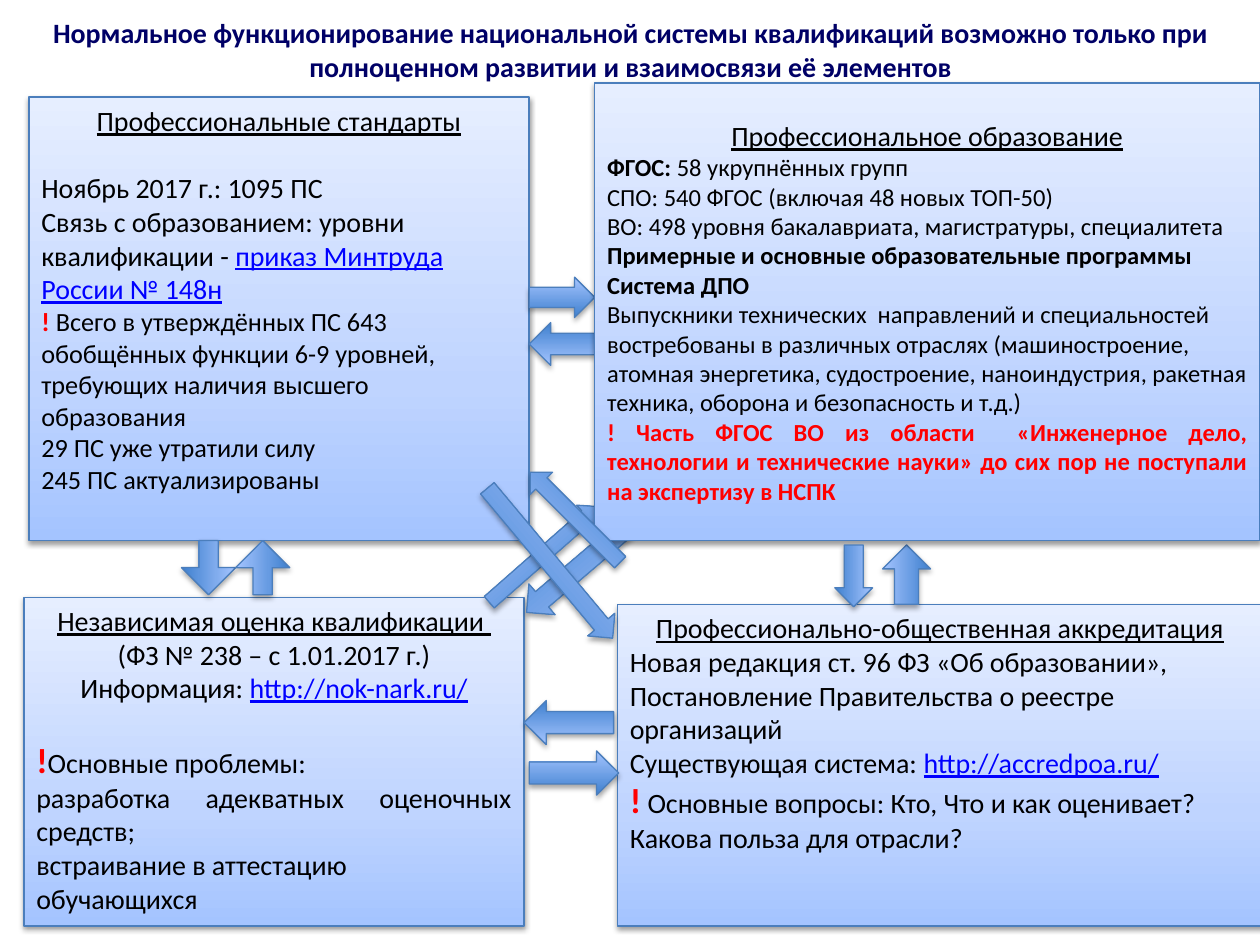
from copy import deepcopy

from lxml import etree
from pptx import Presentation
from pptx.dml.color import RGBColor
from pptx.enum.shapes import MSO_SHAPE as SHAPE
from pptx.enum.text import MSO_ANCHOR as ANCHOR, PP_ALIGN as ALIGN
from pptx.oxml.ns import nsdecls, qn
from pptx.util import Inches, Pt

rgb = RGBColor.from_string
L, C, J = ALIGN.LEFT, ALIGN.CENTER, ALIGN.JUSTIFY
BLACK, RED, BLUE, NAVY = "000000", "FF0000", "0000FF", "000066"
BOX_STOPS = [(0, "A4C4FF"), (0.35, "BFD4FF"), (1, "E6EEFF")]
ARROW_STOPS = [(0, "3F80CE"), (1, "A4C4FF")]
GAP = 19.5  # one 16 pt line


def add_shape(kind, at, stops, alpha, dist):
    """Add a shape with an upward gradient, a thin outline and a soft shadow."""
    sp = s.shapes.add_shape(kind, *map(Inches, at))
    sp.fill.gradient()
    sp.fill.gradient_angle = 90
    gs_list = sp._element.spPr.find(".//" + qn("a:gsLst"))
    while len(gs_list) < len(stops):
        gs_list.append(deepcopy(gs_list[0]))
    for stop, (position, color) in zip(sp.fill.gradient_stops, stops):
        stop.position = position
        stop.color.rgb = rgb(color)
    sp.line.color.rgb = rgb("4B7EBC")
    sp.line.width = Pt(0.75)
    sp._element.spPr.append(etree.fromstring(
        f'<a:effectLst {nsdecls("a")}><a:outerShdw blurRad="{Pt(3.1)}" '
        f'dist="{Pt(dist)}" dir="5400000" rotWithShape="0"><a:srgbClr val="000000">'
        f'<a:alpha val="{alpha * 1000}"/></a:srgbClr></a:outerShdw></a:effectLst>'))
    return sp


def write(sp, anchor, paragraphs):
    """Fill with (align, space before, runs); a run is text, size, colour, marks."""
    tf = sp.text_frame
    tf.word_wrap = True
    tf.vertical_anchor = anchor
    for i, (align, before, runs) in enumerate(paragraphs):
        p = tf.paragraphs[0] if i == 0 else tf.add_paragraph()
        p.alignment = align
        p.space_before = Pt(before)
        for text, size, color, marks in runs:
            r = p.add_run()
            r.text = text
            r.font.name = "Calibri"
            r.font.size = Pt(size)
            r.font.color.rgb = rgb(color)
            r.font.bold = "b" in marks
            r.font.underline = "u" in marks


prs = Presentation()
prs.slide_width, prs.slide_height = Inches(10), Inches(7.5)
s = prs.slides.add_slide(prs.slide_layouts[6])

# Title
title = s.shapes.add_textbox(*map(Inches, (0.01, 0.12, 9.99, 0.54)))
write(title, ANCHOR.MIDDLE, [(C, 0, [(
    "Нормальное функционирование национальной системы квалификаций возможно "
    "только при полноценном развитии и взаимосвязи её элементов", 16, NAVY, "b")])])

# Texts of the four elements
standards = [
    (C, 0, [("Профессиональные стандарты", 16, BLACK, "u")]),
    (L, GAP, [("Ноябрь 2017 г.: 1095 ПС", 16, BLACK, "")]),
    (L, 0, [("Связь с образованием: уровни квалификации - ", 16, BLACK, ""),
            ("приказ Минтруда России № 148н", 16, BLUE, "u")]),
    (L, 0, [("! ", 15, RED, "b"),
            ("Всего в утверждённых ПС 643 обобщённых функции 6-9 уровней, "
             "требующих наличия высшего образования", 15, BLACK, "")]),
    (L, 0, [("29 ПС уже утратили силу", 15, BLACK, "")]),
    (L, 0, [("245 ПС актуализированы", 15, BLACK, "")]),
]
accreditation = [
    (C, 0, [("Профессионально-общественная аккредитация", 16, BLACK, "u")]),
    (L, 0, [("Новая редакция ст. 96 ФЗ «Об образовании», Постановление "
             "Правительства о реестре организаций", 16, BLACK, "")]),
    (L, 0, [("Существующая система: ", 16, BLACK, ""),
            ("http://accredpoa.ru/", 16, BLUE, "u")]),
    (L, 0, [("!", 20, RED, "b"),
            (" Основные вопросы: Кто, Что и как оценивает? "
             "Какова польза для отрасли?", 16, BLACK, "")]),
]
assessment = [
    (C, 0, [("Независимая оценка квалификации ", 16, BLACK, "u")]),
    (C, 0, [("(ФЗ № 238 – с 1.01.2017 г.)", 16, BLACK, "")]),
    (C, 0, [("Информация: ", 16, BLACK, ""),
            ("http://nok-nark.ru/", 16, BLUE, "u")]),
    (J, GAP, [("!", 20, RED, "b"), ("Основные проблемы: ", 16, BLACK, "")]),
    (J, 0, [("разработка адекватных оценочных средств;", 16, BLACK, "")]),
    (L, 0, [("встраивание в аттестацию обучающихся", 16, BLACK, "")]),
]
education = [
    (C, 0, [("Профессиональное образование", 16, BLACK, "u")]),
    (L, 0, [("ФГОС: ", 14, BLACK, "b"), ("58 укрупнённых групп", 14, BLACK, "")]),
    (L, 0, [("СПО: 540 ФГОС (включая 48 новых ТОП-50)", 14, BLACK, "")]),
    (L, 0, [("ВО: 498 уровня бакалавриата, магистратуры, специалитета",
             14, BLACK, "")]),
    (L, 0, [("Примерные и основные образовательные программы", 14, BLACK, "b")]),
    (L, 0, [("Система ДПО", 14, BLACK, "b")]),
    (L, 0, [("Выпускники технических  направлений и специальностей востребованы "
             "в различных отраслях (машиностроение, атомная энергетика, "
             "судостроение, наноиндустрия, ракетная техника, оборона и "
             "безопасность и т.д.)", 14, BLACK, "")]),
    (J, 0, [("! Часть ФГОС ВО из области  «Инженерное дело, технологии и "
             "технические науки» до сих пор не поступали на экспертизу в НСПК",
             14, RED, "b")]),
]

# Arrows: place, rotation, shaft share of the height
arrows_behind = [
    ((4.2, 2.2, 0.52, 0.32), 0, 0.5),
    ((4.2, 2.56, 0.52, 0.34), 180, 0.5),
    ((1.44, 4.29, 0.43, 0.43), 90, 0.355),
    ((4.2, 5.96, 0.71, 0.35), 0, 0.5),
    ((4.16, 5.56, 0.71, 0.35), 180, 0.5),
    ((6.96, 4.37, 0.47, 0.38), 270, 0.5),
    ((3.74, 4.28, 1.15, 0.24), 318.7, 0.5),
    ((4.01, 4.24, 1.42, 0.32), 139.6, 0.5),
]
arrows_front = [
    ((3.59, 4.33, 1.55, 0.28), 50.1, 0.5),
    ((4.06, 3.98, 1.01, 0.25), 225, 0.5),
    ((6.53, 4.42, 0.49, 0.3), 90, 0.5),
    ((1.87, 4.29, 0.43, 0.43), 270, 0.355),
]

# Two layers, from back to front: boxes, then the arrows above them
layers = [
    ([((0.23, 0.77, 3.97, 3.52), ANCHOR.TOP, standards),
      ((4.9, 4.8, 5.12, 2.55), ANCHOR.TOP, accreditation),
      ((0.19, 4.74, 3.97, 2.61), ANCHOR.TOP, assessment)], arrows_behind),
    ([((4.72, 0.66, 5.28, 3.63), ANCHOR.MIDDLE, education)], arrows_front),
]
for boxes, arrows in layers:
    for at, anchor, paragraphs in boxes:
        box = add_shape(SHAPE.RECTANGLE, at, BOX_STOPS, 38, 1.6)
        write(box, anchor, paragraphs)
    for at, rotation, shaft in arrows:
        arrow = add_shape(SHAPE.RIGHT_ARROW, at, ARROW_STOPS, 35, 1.8)
        arrow.rotation = rotation
        arrow.adjustments[0] = shaft

prs.save("out.pptx")
